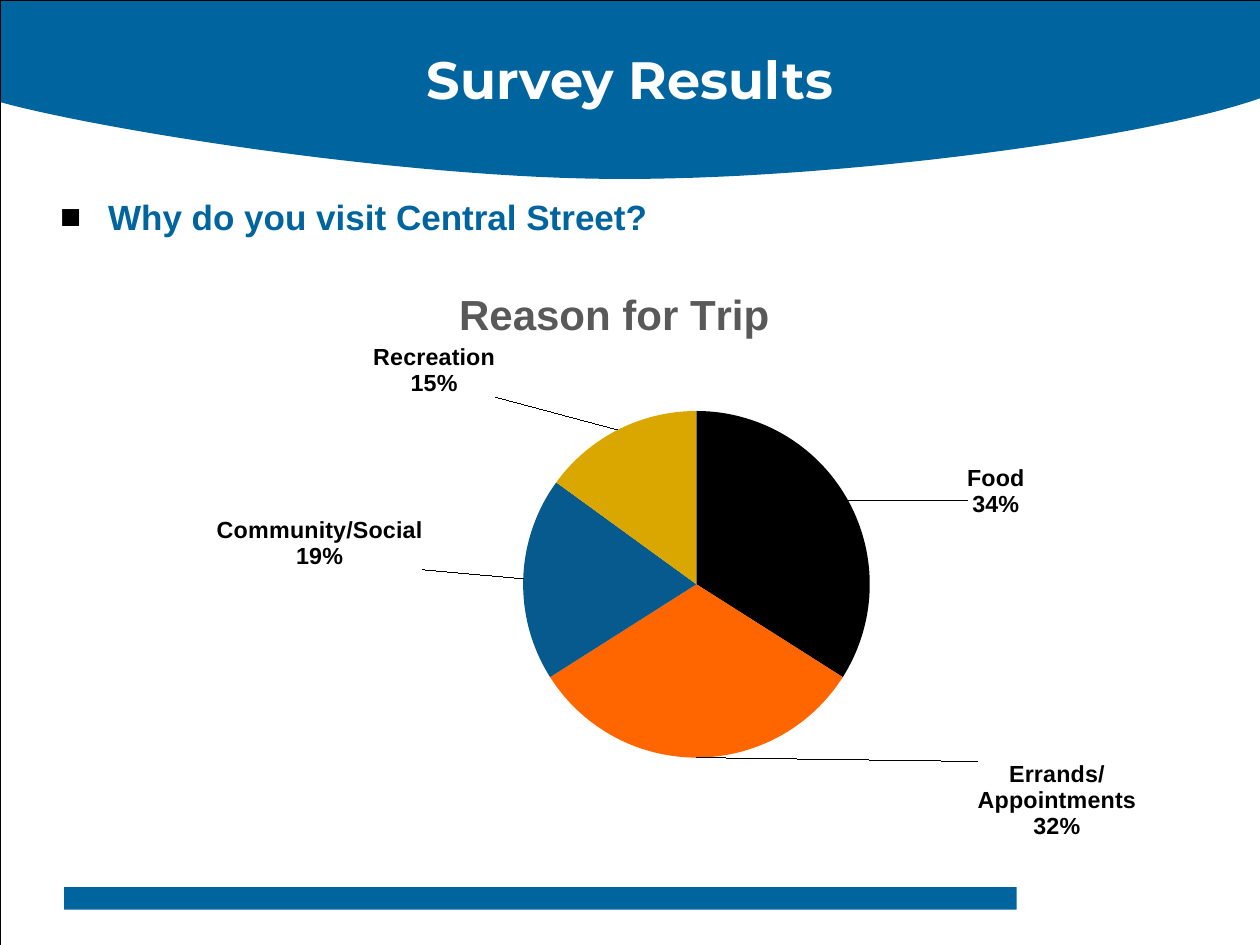
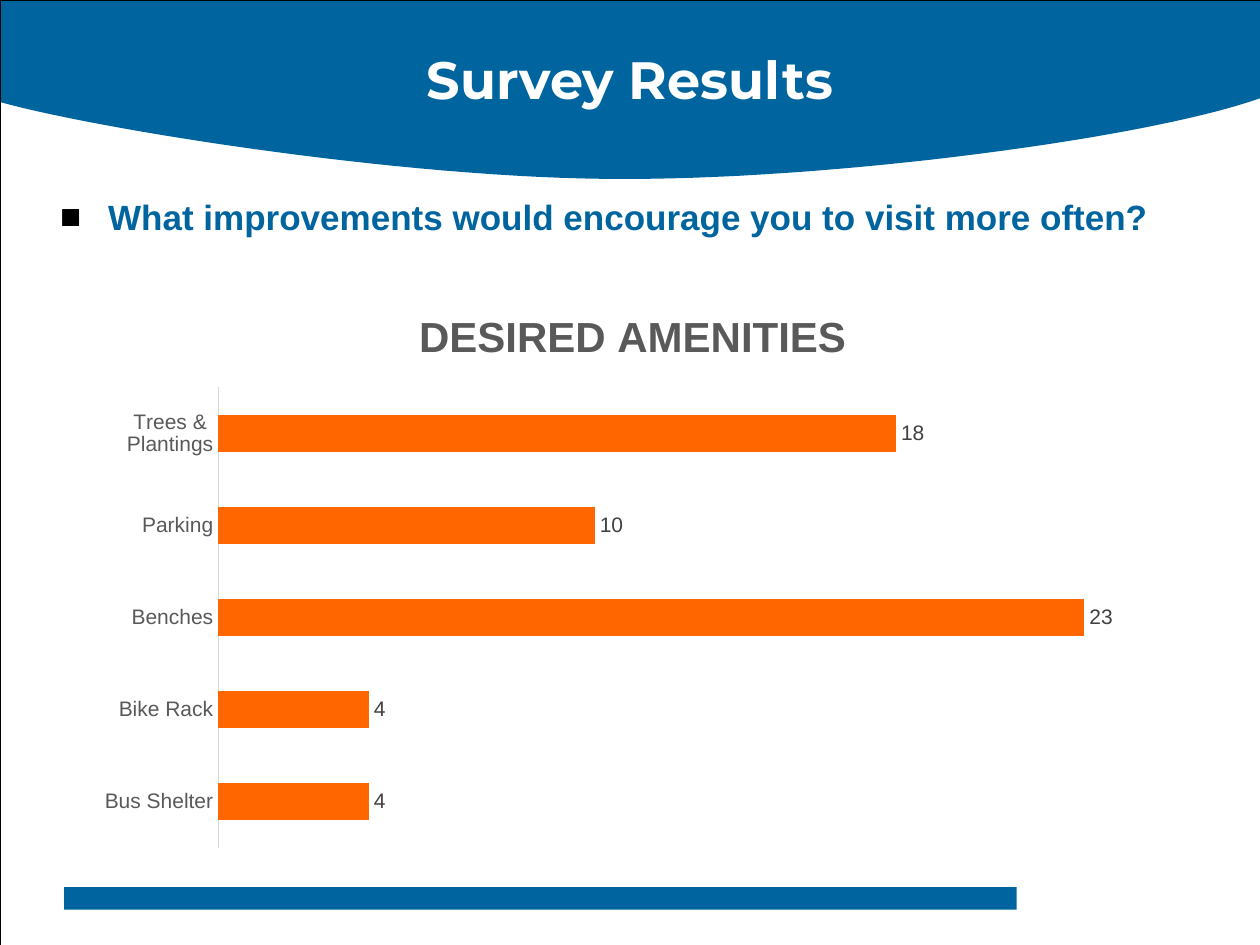
from lxml import etree
from pptx import Presentation
from pptx.chart.data import CategoryChartData
from pptx.dml.color import RGBColor
from pptx.enum.chart import XL_CHART_TYPE as ChartType, XL_LABEL_POSITION as LabelPosition
from pptx.enum.chart import XL_TICK_MARK as TickMark
from pptx.enum.shapes import MSO_SHAPE as Preset
from pptx.enum.text import MSO_ANCHOR as Anchor, PP_ALIGN as Align
from pptx.oxml import parse_xml
from pptx.oxml.ns import nsdecls, qn
from pptx.util import Inches, Pt

BLUE = RGBColor(0x00, 0x65, 0x9F)
DEEP_BLUE = RGBColor(0x06, 0x5A, 0x8D)
ORANGE = RGBColor(0xFF, 0x66, 0x00)
GOLD = RGBColor(0xDA, 0xA6, 0x00)
BLACK = RGBColor(0x00, 0x00, 0x00)
WHITE = RGBColor(0xFF, 0xFF, 0xFF)
DARK_GREY = RGBColor(0x40, 0x40, 0x40)
GREY = RGBColor(0x59, 0x59, 0x59)
LIGHT_GREY = RGBColor(0xD9, 0xD9, 0xD9)

QUESTIONS = [
    "Why do you visit Central Street?",
    "What improvements would encourage you to visit more often?",
]
# Lower edge of the header band: two cubic curves, the second starting where the first ends
BAND_START = (10, 0.78)
BAND_CURVES = [
    [(9.1, 1.1), (6.65, 1.42), (4.98, 1.42)],
    [(3.32, 1.43), (0.83, 1.04), (0, 0.81)],
]
CURVE_STEPS = 30


def layout_xml(x, y, size=None, edge=True):
    """Return a manual chart layout in fractions of the chart; size makes it an inner plot area."""
    parts = '<c:layoutTarget val="inner"/>' if size else ""
    if edge:
        parts += '<c:xMode val="edge"/><c:yMode val="edge"/>'
    parts += f'<c:x val="{x}"/><c:y val="{y}"/>'
    if size:
        parts += f'<c:w val="{size[0]}"/><c:h val="{size[1]}"/>'
    return parse_xml(
        f'<c:layout {nsdecls("c")}><c:manualLayout>{parts}</c:manualLayout></c:layout>')


def add_titled_chart(slide, kind, box, categories, values, title, title_at, plot_at, plot_size):
    data = CategoryChartData()
    data.categories = categories
    data.add_series("Series 1", values)
    chart = slide.shapes.add_chart(kind, *map(Inches, box), data).chart
    chart.has_legend = False
    chart.font.name = "Arial"
    chart.font.size = Pt(10)
    chart.font.color.rgb = BLACK

    chart.has_title = True
    chart.chart_title.text_frame.text = title
    font = chart.chart_title.text_frame.paragraphs[0].runs[0].font
    font.name, font.size, font.bold = "Arial", Pt(24), True
    font.color.rgb = GREY

    title_element = chart.chart_title._element
    plot_element = title_element.getparent().find(qn("c:plotArea"))
    for element in (title_element, plot_element):
        for old_layout in element.findall(qn("c:layout")):
            element.remove(old_layout)
    title_element.find(qn("c:tx")).addnext(layout_xml(*title_at))
    plot_element.insert(0, layout_xml(*plot_at, plot_size))
    return chart


presentation = Presentation()
presentation.slide_width = Inches(10)
presentation.slide_height = Inches(7.5)

band_points = [(10, 0), BAND_START]
for control_1, control_2, end in BAND_CURVES:
    start = band_points[-1]
    for step in range(1, CURVE_STEPS + 1):
        t = step / CURVE_STEPS
        weights = ((1 - t) ** 3, 3 * t * (1 - t) ** 2, 3 * t ** 2 * (1 - t), t ** 3)
        corners = (start, control_1, control_2, end)
        band_points.append(tuple(
            sum(weight * corner[axis] for weight, corner in zip(weights, corners))
            for axis in (0, 1)))

# Shared header, footer, frame, title and question
slides = []
for question in QUESTIONS:
    slide = presentation.slides.add_slide(presentation.slide_layouts[6])
    slides.append(slide)

    builder = slide.shapes.build_freeform(0, 0)
    builder.add_line_segments([(Inches(x), Inches(y)) for x, y in band_points])
    band = builder.convert_to_shape()
    footer = slide.shapes.add_shape(
        Preset.RECTANGLE, Inches(0.51), Inches(7.04), Inches(7.56), Inches(0.18))
    for shape in (band, footer):
        shape.shadow.inherit = False
        shape.fill.solid()
        shape.fill.fore_color.rgb = BLUE
        shape.line.fill.background()

    frame = slide.shapes.add_shape(
        Preset.RECTANGLE, 0, 0, presentation.slide_width, presentation.slide_height)
    frame.shadow.inherit = False
    frame.fill.background()
    frame.line.color.rgb = BLACK
    frame.line.width = Pt(0.2)

    title_box = slide.shapes.add_textbox(0, 0, Inches(10), Inches(1.25))
    title_box.text_frame.word_wrap = True
    title_box.text_frame.vertical_anchor = Anchor.MIDDLE
    title_box.text_frame.text = "Survey Results"
    paragraph = title_box.text_frame.paragraphs[0]
    paragraph.alignment = Align.CENTER
    font = paragraph.runs[0].font
    font.name, font.size, font.bold = "Montserrat", Pt(30), True
    font.color.rgb = WHITE

    question_box = slide.shapes.add_textbox(Inches(0.38), Inches(1.5), Inches(9), Inches(5.32))
    question_box.text_frame.word_wrap = True
    question_box.text_frame.text = question
    paragraph = question_box.text_frame.paragraphs[0]
    properties = paragraph._p.get_or_add_pPr()
    properties.set("marL", str(Inches(0.38)))
    properties.set("indent", str(-Inches(0.38)))
    bullet_color = etree.SubElement(properties, qn("a:buClr"))
    etree.SubElement(bullet_color, qn("a:srgbClr"), val=str(BLACK))
    etree.SubElement(properties, qn("a:buFont"), typeface="Arial")
    etree.SubElement(properties, qn("a:buChar"), char="■")
    font = paragraph.runs[0].font
    font.name, font.size, font.bold = "Arial", Pt(20), True
    font.color.rgb = BLUE

reasons_slide, amenities_slide = slides

# Slide 1: reasons for the trip; each label is moved off its default place
reasons = [
    ("Food", 34, BLACK, (0.099, 0.035)),
    ("Errands/Appointments", 32, ORANGE, (0.318, -0.006)),
    ("Community/Social", 19, DEEP_BLUE, (-0.082, -0.059)),
    ("Recreation", 15, GOLD, (-0.105, -0.044)),
]
names, shares, colors, offsets = zip(*reasons)
pie = add_titled_chart(
    reasons_slide, ChartType.PIE, (0.38, 2.12, 9, 4.72), names, shares,
    "Reason for Trip", (0.356, 0.022), (0.419, 0.242), (0.306, 0.583))
pie.plots[0].vary_by_categories = True
series = pie.plots[0].series[0]
labels = series.data_labels
labels.show_value = False
labels.show_category_name = True
labels.show_percentage = True
labels.position = LabelPosition.OUTSIDE_END
for index, color in enumerate(colors):
    point = series.points[index]
    point.format.fill.solid()
    point.format.fill.fore_color.rgb = color
    point.format.line.fill.background()
    font = point.data_label.font
    font.name, font.size, font.bold = "Arial", Pt(13.3), True
    font.color.rgb = BLACK
    point.data_label.position = LabelPosition.OUTSIDE_END
for label, offset in zip(series._element.iter(qn("c:dLbl")), offsets):
    label.insert(1, layout_xml(*offset, edge=False))
    for tag, shown in (("c:showVal", "0"), ("c:showCatName", "1"), ("c:showPercent", "1")):
        label.find(qn(tag)).set("val", shown)
    separator = etree.Element(qn("c:separator"))
    separator.text = "\n"
    label.find(qn("c:showBubbleSize")).addnext(separator)

# Slide 2: desired amenities, listed from the bottom bar up
amenities = {"Bus Shelter": 4, "Bike Rack": 4, "Benches": 23, "Parking": 10,
             "Trees & Plantings": 18}
bars = add_titled_chart(
    amenities_slide, ChartType.BAR_CLUSTERED, (0.66, 2.26, 8.72, 4.57),
    list(amenities), list(amenities.values()),
    "DESIRED AMENITIES", (0.299, 0.03), (0.123, 0.178), (0.857, 0.8))
plot = bars.plots[0]
plot.vary_by_categories = False
plot.gap_width = 150
plot.overlap = -25
plot.series[0].format.fill.solid()
plot.series[0].format.fill.fore_color.rgb = ORANGE
plot.has_data_labels = True
plot.data_labels.show_value = True
plot.data_labels.position = LabelPosition.OUTSIDE_END

value_axis = bars.value_axis
value_axis.minimum_scale = 0
value_axis.maximum_scale = 25
value_axis.has_major_gridlines = False
value_axis.visible = False
category_axis = bars.category_axis
category_axis.major_tick_mark = TickMark.NONE
category_axis.format.line.color.rgb = LIGHT_GREY
category_axis.format.line.width = Pt(0.75)
for font, color in ((category_axis.tick_labels.font, GREY), (plot.data_labels.font, DARK_GREY)):
    font.name, font.size = "Arial", Pt(12)
    font.color.rgb = color

presentation.save("out.pptx")
